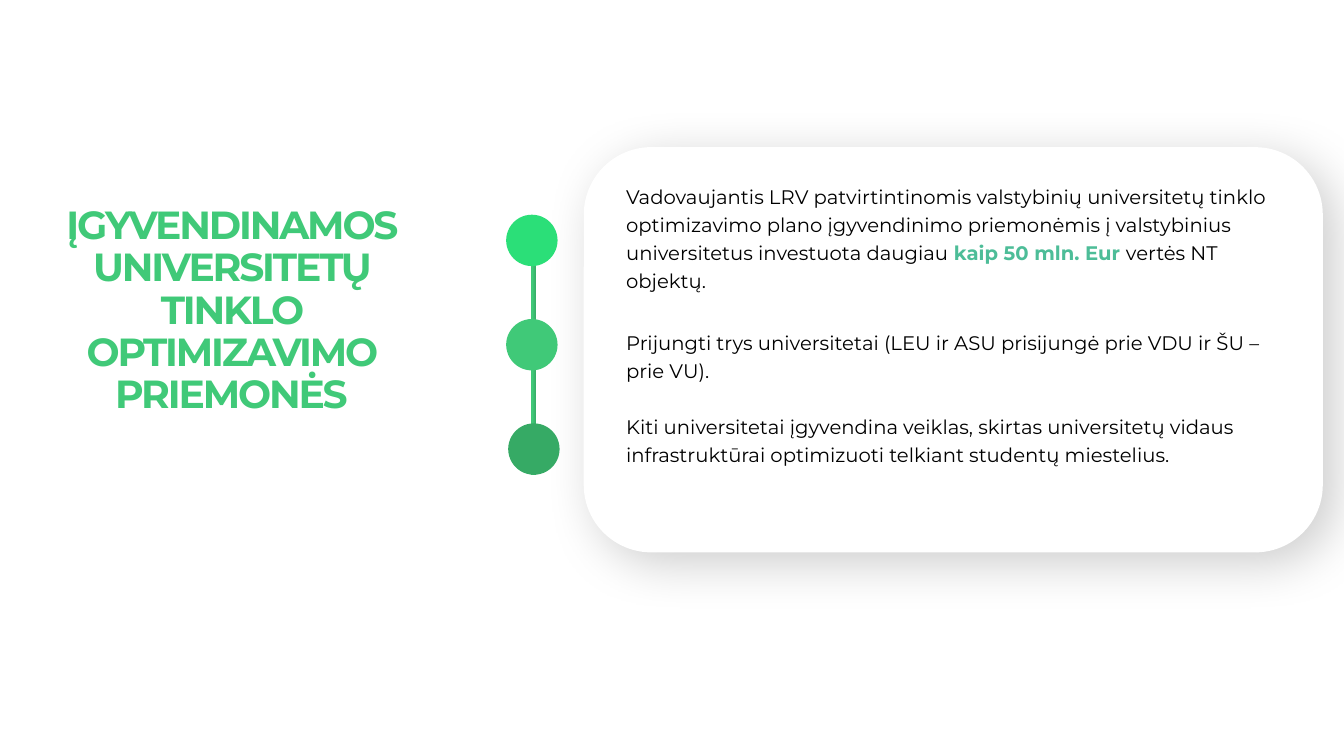
"""Build the slide on the measures for optimising the university network."""
import pptx
import pptx.dml.color
import pptx.enum.shapes
import pptx.enum.text
import pptx.oxml
import pptx.oxml.ns
import pptx.util

Inches, Pt = pptx.util.Inches, pptx.util.Pt
Shape = pptx.enum.shapes.MSO_SHAPE

HEADING = "ĮGYVENDINAMOS UNIVERSITETŲ TINKLO OPTIMIZAVIMO PRIEMONĖS"
MEASURES = [
    (0, [("Vadovaujantis LRV patvirtintinomis valstybinių universitetų tinklo optimizavimo "
          "plano įgyvendinimo priemonėmis į valstybinius universitetus investuota daugiau ", "text"),
         ("kaip 50 mln. Eur ", "accent"),
         ("vertės NT objektų.", "text")]),
    (24.3, [("Prijungti trys universitetai (LEU ir ASU prisijungė prie VDU ir ŠU – prie VU).", "text")]),
    (20, [("Kiti universitetai įgyvendina veiklas, skirtas universitetų vidaus "
           "infrastruktūrai optimizuoti telkiant studentų miestelius.", "text")]),
]
COLORS = {"text": "000000", "accent": "4DBD98", "card": "FFFFFF",
          "bright": "2BDF78", "green": "40C978", "dark": "36AA65"}
DOTS = [("bright", 5.02), ("green", 5.02), ("dark", 5.04)]
DOT_TOP, DOT_STEP, DOT_SIZE = 2.13, 1.035, 0.51
FONTS = {
    "heading": {"name": "Montserrat", "size": Pt(28), "bold": True},
    "text": {"name": "Montserrat", "size": Pt(14), "bold": False},
    "accent": {"name": "Montserrat", "size": Pt(14), "bold": True},
}
SHADOW = (
    f'<a:effectLst {pptx.oxml.ns.nsdecls("a")}>'
    '<a:outerShdw blurRad="469900" dist="152400" dir="2580000" algn="tl" rotWithShape="0">'
    '<a:srgbClr val="000000"><a:alpha val="20000"/></a:srgbClr>'
    '</a:outerShdw></a:effectLst>'
)


def color(key):
    return pptx.dml.color.RGBColor.from_string(COLORS[key])


def apply(target, values):
    for name, value in values.items():
        setattr(target, name, value)


def place(target, left, top, width, height):
    apply(target, {"left": Inches(left), "top": Inches(top),
                   "width": Inches(width), "height": Inches(height)})


def add_filled(slide, preset, box, fill):
    added = slide.shapes.add_shape(preset, *map(Inches, box))
    added.shadow.inherit = False
    added.fill.solid()
    added.fill.fore_color.rgb = color(fill)
    added.line.fill.background()
    return added


def add_run(paragraph, text, font, fill):
    run = paragraph.add_run()
    run.text = text
    apply(run.font, FONTS[font])
    run.font.color.rgb = color(fill)
    return run


def add_card(slide):
    card = add_filled(slide, Shape.ROUNDED_RECTANGLE, (5.79, 1.46, 7.33, 4.02), "card")
    properties = card._element.spPr
    properties.remove(properties.find(pptx.oxml.ns.qn("a:effectLst")))
    properties.append(pptx.oxml.parse_xml(SHADOW))


def add_timeline(slide):
    bar = add_filled(slide, Shape.RECTANGLE, (5.27, 2.36, 0.05, 2.35), "green")
    bar.fill.gradient()
    bar.fill.gradient_angle = 180
    for stop, (fill, position) in zip(bar.fill.gradient_stops, [("dark", 0), ("green", 0.81)]):
        stop.color.rgb = color(fill)
        stop.position = position
    for index, (fill, left) in enumerate(DOTS):
        top = DOT_TOP + index * DOT_STEP
        add_filled(slide, Shape.OVAL, (left, top, DOT_SIZE, DOT_SIZE), fill)


def fill_title(title):
    place(title, 0.38, 0.91, 3.83, 3.28)
    apply(title.text_frame, {"word_wrap": True,
                             "auto_size": pptx.enum.text.MSO_AUTO_SIZE.NONE,
                             "vertical_anchor": pptx.enum.text.MSO_ANCHOR.BOTTOM})
    paragraph = title.text_frame.paragraphs[0]
    apply(paragraph, {"alignment": pptx.enum.text.PP_ALIGN.CENTER, "line_spacing": 0.9})
    run = add_run(paragraph, HEADING, "heading", "green")
    run.font._element.set("spc", "-150")


def fill_body(body):
    place(body, 6.11, 1.74, 6.83, 3.6)
    frame = body.text_frame
    apply(frame, {"word_wrap": True,
                  "auto_size": pptx.enum.text.MSO_AUTO_SIZE.NONE,
                  "vertical_anchor": pptx.enum.text.MSO_ANCHOR.TOP})
    for index, (gap, runs) in enumerate(MEASURES):
        paragraph = frame.add_paragraph() if index else frame.paragraphs[0]
        apply(paragraph, {"line_spacing": Pt(20), "space_before": Pt(gap), "space_after": Pt(0)})
        properties = paragraph._element.get_or_add_pPr()
        properties.set("marL", "0")
        properties.set("indent", "0")
        properties.append(pptx.oxml.parse_xml(f'<a:buNone {pptx.oxml.ns.nsdecls("a")}/>'))
        for text, style in runs:
            add_run(paragraph, text, style, style)


def main():
    deck = pptx.Presentation()
    apply(deck, {"slide_width": Inches(13.33), "slide_height": Inches(7.5)})
    slide = deck.slides.add_slide(deck.slide_layouts[1])
    body = slide.placeholders[1]
    add_card(slide)
    add_timeline(slide)
    fill_title(slide.shapes.title)
    fill_body(body)
    slide.shapes._spTree.append(body._element)
    deck.save("out.pptx")


if __name__ == "__main__":
    main()
